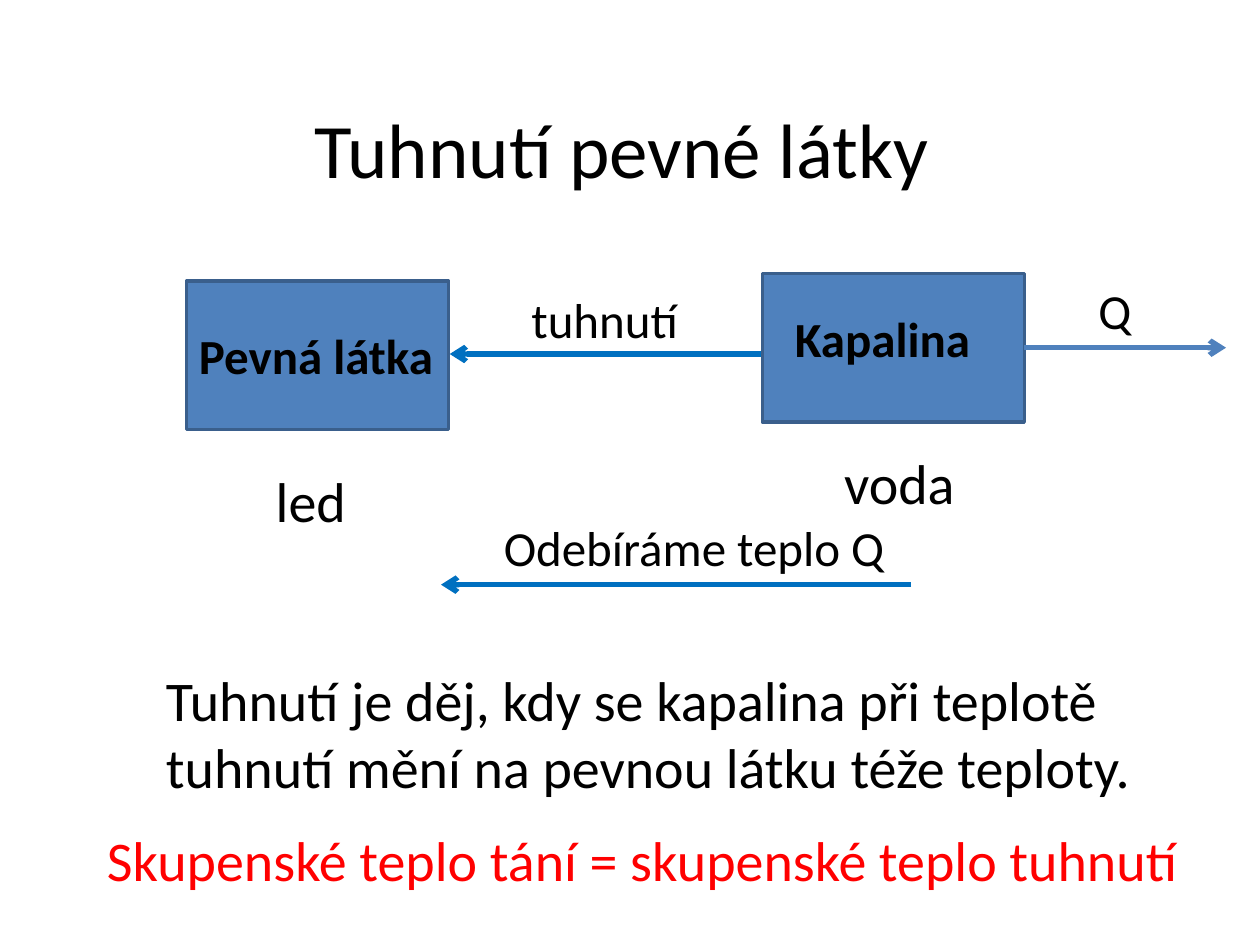
import pptx
import pptx.dml.color
import pptx.enum.shapes
import pptx.enum.text
import pptx.oxml
import pptx.oxml.ns
import pptx.util

Pt = pptx.util.Pt
COLORS = {"text": "000000", "accent": "FF0000", "box": "4F81BD",
          "border": "3A5F8C", "arrow": "0070C0"}


class Diagram:
    font = "Calibri"
    box_size = (149.76, 84.96)

    def __init__(self, slide):
        self.slide = slide

    def color(self, name):
        return pptx.dml.color.RGBColor.from_string(COLORS[name])

    def box(self, left, top):
        sp = self.slide.shapes.add_shape(
            pptx.enum.shapes.MSO_SHAPE.RECTANGLE,
            Pt(left), Pt(top), *map(Pt, self.box_size))
        sp.shadow.inherit = False
        sp.fill.solid()
        sp.fill.fore_color.rgb = self.color("box")
        sp.line.color.rgb = self.color("border")
        sp.line.width = Pt(2)

    def arrow(self, x1, x2, y, color="arrow"):
        """Draw a horizontal arrow with its head at x2."""
        sp = self.slide.shapes.add_connector(
            pptx.enum.shapes.MSO_CONNECTOR.STRAIGHT, Pt(x1), Pt(y), Pt(x2), Pt(y))
        sp.line.color.rgb = self.color(color)
        sp.line.width = Pt(3)
        ln = sp.line._get_or_add_ln()
        ln.append(pptx.oxml.parse_xml(
            f'<a:tailEnd {pptx.oxml.ns.nsdecls("a")} type="arrow"/>'))
        ln.getparent().append(pptx.oxml.parse_xml(
            f'<a:effectLst {pptx.oxml.ns.nsdecls("a")}/>'))

    def text(self, text, left, top, width, height, size=28,
             color="text", bold=False, wrap=False):
        sp = self.slide.shapes.add_textbox(Pt(left), Pt(top), Pt(width), Pt(height))
        tf = sp.text_frame
        tf.text = text
        tf.word_wrap = wrap
        tf.auto_size = pptx.enum.text.MSO_AUTO_SIZE.SHAPE_TO_FIT_TEXT
        r = tf.paragraphs[0].runs[0]
        r.font.name = self.font
        r.font.size = Pt(size)
        r.font.bold = bold
        r.font.color.rgb = self.color(color)


def main():
    prs = pptx.Presentation()
    prs.slide_width, prs.slide_height = Pt(720), Pt(540)
    s = Diagram(prs.slides.add_slide(prs.slide_layouts[6]))

    s.arrow(435.6, 257, 202.3)
    s.text("tuhnutí", 296.6, 162, 99.4, 41)
    s.arrow(520.6, 252, 334.1)
    s.text("Odebíráme teplo Q", 280.8, 292.3, 234, 41)

    s.text("Tuhnutí pevné látky", 172.8, 54.7, 369.4, 60.5, size=44)
    s.text("Tuhnutí je děj, kdy se kapalina při teplotě tuhnutí mění "
           "na pevnou látku téže teploty.", 87.8, 376.6, 616.3, 85, size=32, wrap=True)
    s.text("Skupenské teplo tání = skupenské teplo tuhnutí",
           54, 468, 633.6, 46, size=32, color="accent")

    s.box(435.6, 156.2)
    s.text("Kapalina", 447.1, 172.8, 115.9, 41, bold=True)
    s.text("voda", 475.2, 252.7, 78.5, 46, size=32)

    s.box(106.6, 160.6)
    s.text("Pevná látka", 106.6, 182.2, 149.8, 41, bold=True)
    s.text("led", 150.5, 262.8, 54.7, 46, size=32)

    s.arrow(585.4, 700.6, 198.7, color="box")
    s.text("Q", 620.6, 157, 33.8, 41)

    prs.save("out.pptx")


if __name__ == "__main__":
    main()
